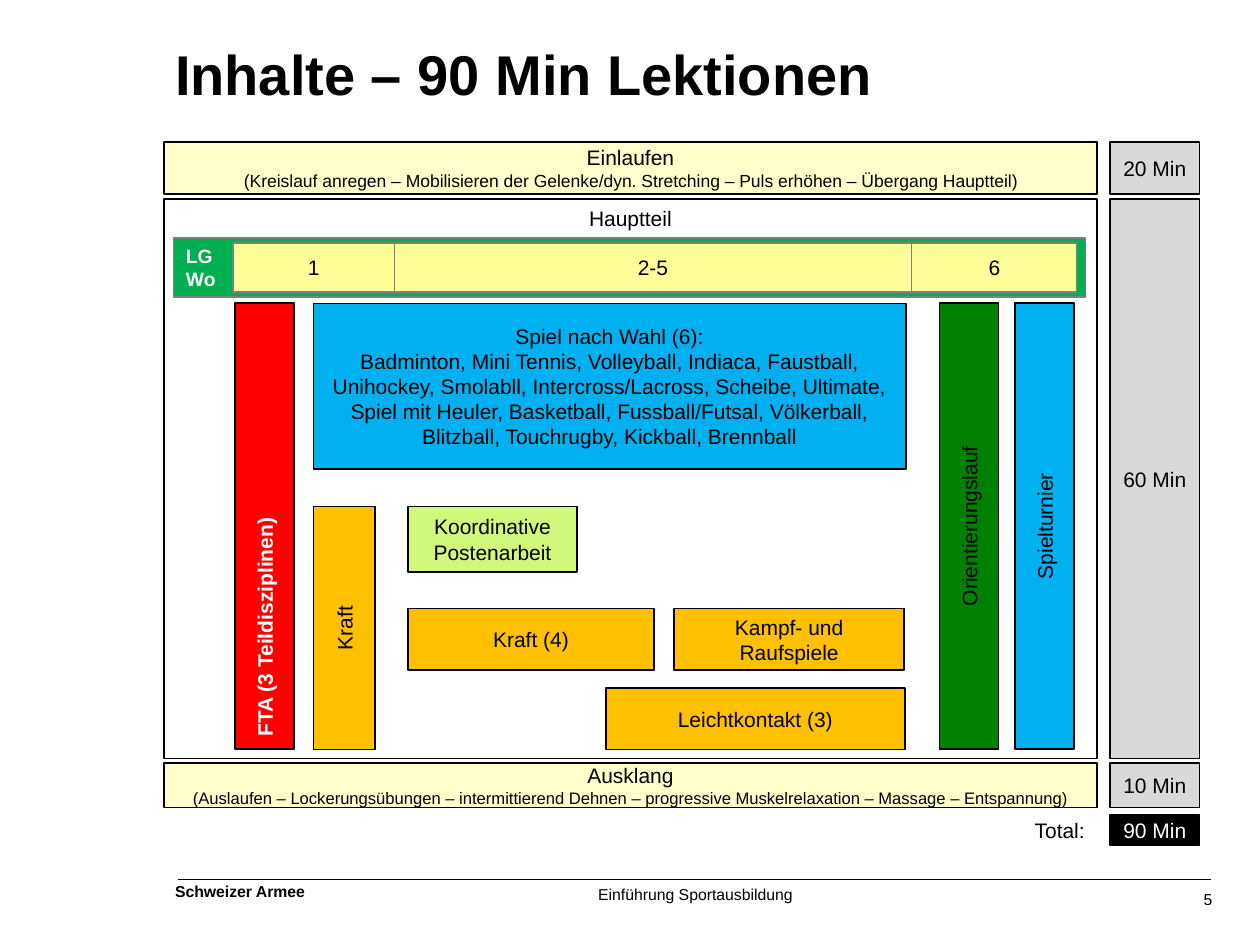
import pptx
import pptx.dml.color
import pptx.enum.shapes
import pptx.enum.text
import pptx.oxml
import pptx.util
from pptx.enum.text import MSO_ANCHOR, PP_ALIGN
from pptx.util import Cm, Pt

BLACK, WHITE, GREY = "000000", "FFFFFF", "D9D9D9"
CREAM, YELLOW, ORANGE, BLUE = "FFFFCC", "FFFF99", "FFC000", "00B0F0"


def color(value):
    return pptx.dml.color.RGBColor.from_string(value)


class LessonSlide:
    """Draws the lesson plan on one slide in a common style."""

    font_name = "Arial"

    def __init__(self, presentation):
        self.slide = presentation.slides.add_slide(presentation.slide_layouts[5])

    def set_text(self, shape, lines, sizes=(12,), ink=BLACK, bold=False,
                 align=PP_ALIGN.CENTER, anchor=MSO_ANCHOR.MIDDLE, inset=True, wrap=True):
        frame = shape.text_frame
        frame.word_wrap = wrap
        frame.auto_size = pptx.enum.text.MSO_AUTO_SIZE.NONE
        frame.vertical_anchor = anchor
        frame.margin_left = frame.margin_right = Cm(0.25 if inset else 0)
        frame.margin_top = frame.margin_bottom = Cm(0.13 if inset else 0)
        frame.text = lines
        for index, paragraph in enumerate(frame.paragraphs):
            paragraph.alignment = align
            font = paragraph.font
            font.name = self.font_name
            font.size = Pt(sizes[min(index, len(sizes) - 1)])
            font.bold = bold
            font.color.rgb = color(ink)

    def title(self, text, left, top, width, height):
        shape = self.slide.shapes.title
        shape.left, shape.top = Cm(left), Cm(top)
        shape.width, shape.height = Cm(width), Cm(height)
        self.set_text(shape, text, (32,), bold=True, align=PP_ALIGN.LEFT,
                      anchor=MSO_ANCHOR.TOP, inset=False)

    def box(self, text, left, top, width, height, fill=None,
            outline=BLACK, weight=1, **style):
        shape = self.slide.shapes.add_shape(
            pptx.enum.shapes.MSO_SHAPE.RECTANGLE,
            Cm(left), Cm(top), Cm(width), Cm(height))
        shape.shadow.inherit = False
        if fill:
            shape.fill.solid()
            shape.fill.fore_color.rgb = color(fill)
        else:
            shape.fill.background()
        shape.line.color.rgb = color(outline)
        shape.line.width = Pt(weight)
        self.set_text(shape, text, **style)
        return shape

    def upright_box(self, text, left, top, width, height, fill, **style):
        shift = (height - width) / 2
        shape = self.box(text, left - shift, top + shift, height, width, fill, **style)
        shape.rotation = 270

    def label(self, text, left, top, width, height, **style):
        shape = self.slide.shapes.add_textbox(Cm(left), Cm(top), Cm(width), Cm(height))
        self.set_text(shape, text, **style)

    def rule(self, left, right, top):
        line = self.slide.shapes.add_connector(
            pptx.enum.shapes.MSO_CONNECTOR.STRAIGHT,
            Cm(left), Cm(top), Cm(right), Cm(top))
        line.line.color.rgb = color(BLACK)
        line.line.width = Pt(0.75)
        properties = line._element.spPr
        properties.append(pptx.oxml.parse_xml(
            '<a:effectLst xmlns:a="http://schemas.openxmlformats.org/drawingml/2006/main"/>'))


def main():
    presentation = pptx.Presentation()
    presentation.slide_width, presentation.slide_height = Cm(25.4), Cm(19.05)
    lesson = LessonSlide(presentation)
    lesson.title("Inhalte – 90 Min Lektionen", 3.53, 0.79, 20.73, 2.74)

    phases = [
        ("Einlaufen\n(Kreislauf anregen – Mobilisieren der Gelenke/dyn. Stretching – "
         "Puls erhöhen – Übergang Hauptteil)",
         "20 Min", 2.87, 1.04, CREAM, (12, 10), MSO_ANCHOR.MIDDLE),
        ("Hauptteil", "60 Min", 4.01, 11.28, None, (12,), MSO_ANCHOR.TOP),
        ("Ausklang\n(Auslaufen – Lockerungsübungen – intermittierend Dehnen – "
         "progressive Muskelrelaxation – Massage – Entspannung)",
         "10 Min", 15.38, 0.9, CREAM, (12, 9.5), MSO_ANCHOR.MIDDLE),
    ]
    for text, duration, top, height, fill, sizes, anchor in phases:
        lesson.box(text, 3.3, top, 18.82, height, fill, sizes=sizes, anchor=anchor)
        lesson.box(duration, 22.38, top, 1.8, height, GREY)
    lesson.label("Total:", 20.32, 16.43, 1.8, 0.61, align=PP_ALIGN.RIGHT)
    lesson.box("90 Min", 22.38, 16.43, 1.8, 0.61, BLACK, ink=WHITE)

    lesson.box("LG\vWo", 3.5, 4.8, 18.39, 1.19, "00B050", "808080", 0.75,
               sizes=(11,), ink=WHITE, bold=True, align=PP_ALIGN.LEFT)
    left = 4.7
    for weeks, width in [("1", 3.25), ("2-5", 10.43), ("6", 3.33)]:
        lesson.box(weeks, left, 4.9, width, 0.99, YELLOW, "808080", 0.75)
        left += width

    lesson.upright_box("FTA (3 Teildisziplinen)", 4.74, 6.11, 1.19, 8.99, "FF0000",
                       ink=WHITE, bold=True, align=PP_ALIGN.LEFT)
    lesson.upright_box("Orientierungslauf", 18.94, 6.11, 1.19, 8.99, "008000")
    lesson.upright_box("Spielturnier", 20.46, 6.11, 1.19, 8.99, BLUE)
    lesson.upright_box("Kraft", 6.32, 10.21, 1.24, 4.9, ORANGE)

    activities = [
        ("Spiel nach Wahl (6):\nBadminton, Mini Tennis, Volleyball, Indiaca, Faustball, "
         "Unihockey, Smolabll, Intercross/Lacross, Scheibe, Ultimate, "
         "Spiel mit Heuler, Basketball, Fussball/Futsal, Völkerball, "
         "Blitzball, Touchrugby, Kickball, Brennball", 6.32, 6.12, 11.94, 3.33, BLUE),
        ("Koordinative Postenarbeit", 8.23, 10.21, 3.4, 1.32, "D1F77B"),
        ("Kraft (4)", 8.23, 12.27, 4.95, 1.24, ORANGE),
        ("Kampf- und Raufspiele", 13.59, 12.27, 4.64, 1.24, ORANGE),
        ("Leichtkontakt (3)", 12.22, 13.87, 6.02, 1.24, ORANGE),
    ]
    for activity in activities:
        lesson.box(*activity)

    lesson.rule(3.58, 24.41, 17.73)
    footer = dict(sizes=(9,), anchor=MSO_ANCHOR.TOP, inset=False, wrap=False)
    lesson.label("Schweizer Armee", 3.53, 17.78, 2.82, 0.53,
                 bold=True, align=PP_ALIGN.LEFT, **footer)
    lesson.label("Einführung Sportausbildung", 12.06, 17.84, 4.27, 0.53,
                 align=PP_ALIGN.LEFT, **footer)
    lesson.label("5", 23.8, 17.93, 0.64, 0.38, align=PP_ALIGN.RIGHT, **footer)
    presentation.save("out.pptx")


if __name__ == "__main__":
    main()
